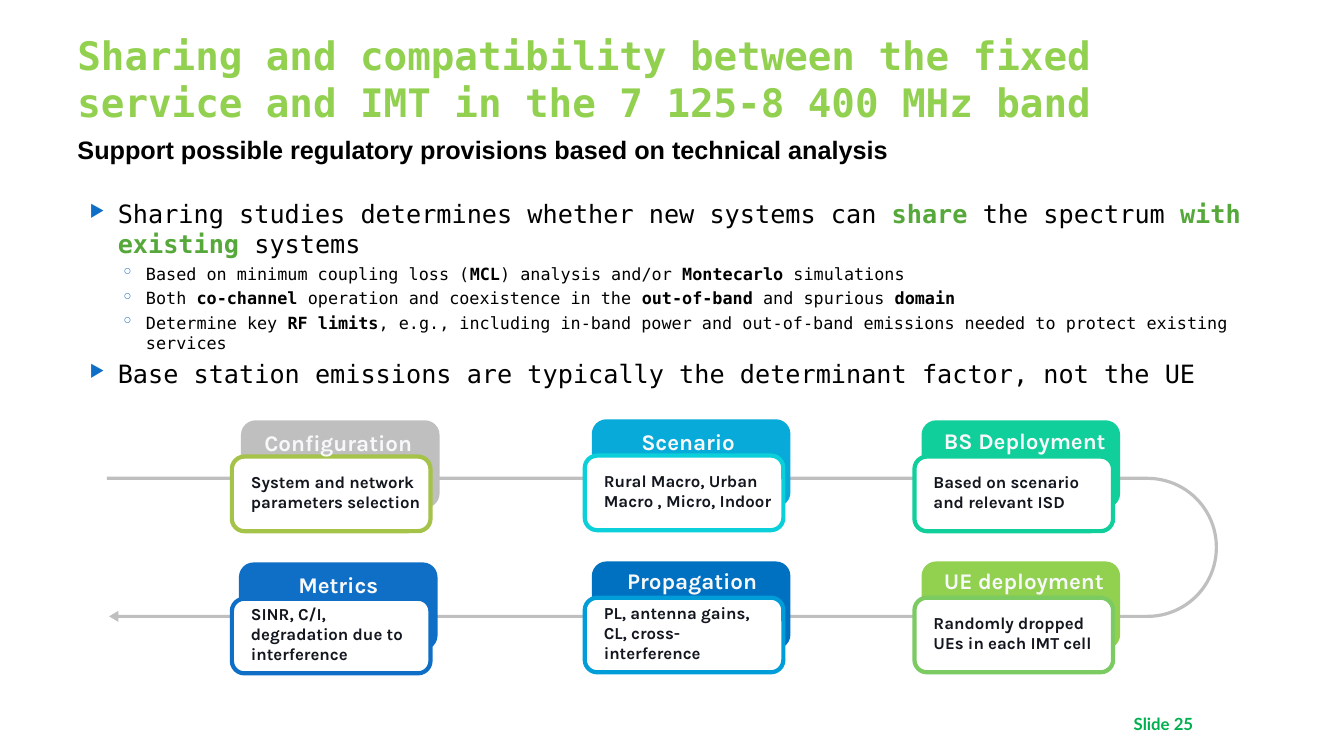
from lxml.etree import SubElement
from pptx import Presentation
from pptx.dml.color import RGBColor
from pptx.enum.shapes import MSO_SHAPE as Shape
from pptx.enum.text import MSO_ANCHOR as Anchor, PP_ALIGN as Align
from pptx.oxml.ns import qn
from pptx.util import Emu, Pt

PX = 9144
MONO, SANS, KARLA, LATO = "DejaVu Sans Mono", "Arial", "Karla", "Lato"
BLACK = RGBColor(0x00, 0x00, 0x00)
WHITE = RGBColor(0xFF, 0xFF, 0xFF)
PALE = RGBColor(0xF7, 0xF8, 0xFA)
INK = RGBColor(0x13, 0x16, 0x1E)
GRAY = RGBColor(0xBF, 0xBF, 0xBF)
LIME = RGBColor(0x92, 0xD0, 0x50)
GREEN = RGBColor(0x55, 0xA8, 0x39)
LEAF = RGBColor(0x00, 0xB0, 0x50)
BLUE = RGBColor(0x0F, 0x6F, 0xC6)
NAVY = RGBColor(0x00, 0x70, 0xC0)
SKY = RGBColor(0x07, 0xAA, 0xD8)
AZURE = RGBColor(0x00, 0x9D, 0xD9)
CYAN = RGBColor(0x0B, 0xD0, 0xD9)
OLIVE = RGBColor(0xA5, 0xC2, 0x49)
MINT = RGBColor(0x10, 0xCF, 0x9B)
GRASS = RGBColor(0x7C, 0xCA, 0x62)

POINTS = [
    (0, "Sharing studies determines whether new systems can *share* the spectrum *with existing* systems"),
    (1, "Based on minimum coupling loss (*MCL*) analysis and/or *Montecarlo* simulations"),
    (1, "Both *co-channel* operation and coexistence in the *out-of-band* and spurious *domain*"),
    (1, "Determine key *RF limits*, e.g., including in-band power and out-of-band emissions "
        "needed to protect existing services"),
    (0, "Base station emissions are typically the determinant factor, not the UE"),
]
LEVELS = [
    dict(left=40, hang=28, gap=4, size=18, mark="▶", pct=68, accent=GREEN),
    dict(left=68, hang=25, gap=3.2, size=12, mark="◦", pct=100, accent=BLACK),
]
CARDS = [
    (230, 453, 9, (7, -32), GRAY, OLIVE, "Configuration", "System and network parameters selection"),
    (580, 452, 7, (4, -32), SKY, CYAN, "Scenario", "Rural Macro, Urban Macro , Micro, Indoor"),
    (907, 453, 7, (11, -34), MINT, MINT, "BS Deployment", "Based on scenario and relevant ISD"),
    (907, 593, 7, (10, -35), LIME, GRASS, "UE deployment", "Randomly dropped UEs in each IMT cell"),
    (580, 593, 7, (8, -35), NAVY, AZURE, "Propagation", "PL, antenna gains, CL, cross-interference"),
    (230, 594, 7, (7, -32), BLUE, BLUE, "Metrics", "SINR, C/I, degradation due to interference"),
]


def scale(*box):
    """Turn px lengths into EMU."""
    return [Emu(n * PX) for n in box]


def style(para, face, size, color, bold=False):
    """Set the font of a paragraph."""
    font = para.font
    font.name, font.size, font.bold = face, Pt(size), bold
    font.color.rgb = color


def label(slide, box, text, face, size, color, align=Align.LEFT, anchor=Anchor.TOP):
    """Place one bold paragraph in a text box."""
    frame = slide.shapes.add_textbox(*scale(*box)).text_frame
    frame.word_wrap = True
    frame.vertical_anchor = anchor
    para = frame.paragraphs[0]
    para.text, para.alignment = text, align
    style(para, face, size, color, True)


def solid(slide, kind, box, fill, line=None):
    """Place a filled shape, outlined if a line colour is given."""
    shape = slide.shapes.add_shape(kind, *scale(*box))
    shape.shadow.inherit = False
    shape.fill.solid()
    shape.fill.fore_color.rgb = fill
    if line is None:
        shape.line.fill.background()
    else:
        shape.line.color.rgb = line
        shape.line.width = Pt(3)
    return shape


def bullet(para, left, hang, mark, pct):
    """Give a paragraph its indent and blue bullet."""
    props = para._p.get_or_add_pPr()
    props.set("marL", str(left * PX))
    props.set("indent", str(-hang * PX))
    tint = SubElement(props, qn("a:buClr"))
    SubElement(tint, qn("a:srgbClr")).set("val", str(BLUE))
    SubElement(props, qn("a:buSzPct")).set("val", str(pct * 1000))
    SubElement(props, qn("a:buChar")).set("char", mark)


def outline(slide, box):
    """Write the bulleted points, with starred words in bold."""
    frame = slide.shapes.add_textbox(*scale(*box)).text_frame
    frame.word_wrap = True
    for i, (level, text) in enumerate(POINTS):
        look = LEVELS[level]
        para = frame.add_paragraph() if i else frame.paragraphs[0]
        para.level = level
        bullet(para, look["left"], look["hang"], look["mark"], look["pct"])
        para.space_before = Pt(look["gap"] if i else 0)
        style(para, MONO, look["size"], BLACK)
        for j, part in enumerate(text.split("*")):
            if part:
                run = para.add_run()
                run.text = part
                if j % 2:
                    run.font.bold = True
                    run.font.color.rgb = look["accent"]


def card(slide, x, y, shift, head, back, edge, name, note):
    """Draw a step: back plate, front plate, heading and note."""
    solid(slide, Shape.ROUNDED_RECTANGLE, (x + shift, y - 36, 197, 87), back)
    solid(slide, Shape.ROUNDED_RECTANGLE, (x, y, 197, 74), WHITE, edge)
    dx, dy = head
    label(slide, (x + dx, y + dy, 197, 37), name, KARLA, 16, PALE, Align.CENTER)
    label(slide, (x + 9, y + 10, 188, 50), note, KARLA, 12, INK, anchor=Anchor.MIDDLE)


def flow(slide, box):
    """Draw the U-turn arrow lying in the box, with the steps on it."""
    x, y, w, h = box
    turn = solid(slide, Shape.U_TURN_ARROW, (x + (w - h) // 2, y + (h - w) // 2, h, w), GRAY)
    turn.rotation = 90
    for i, value in enumerate((0.022, 0.038, 0.064, 0.485, 0.998)):
        turn.adjustments[i] = value
    for step in CARDS:
        card(slide, *step)


def main():
    """Build and save the slide."""
    deck = Presentation()
    deck.slide_width, deck.slide_height = scale(1333, 750)
    slide = deck.slides.add_slide(deck.slide_layouts[6])
    label(slide, (67, 30, 1200, 95),
          "Sharing and compatibility between the fixed service and IMT in the 7 125-8 400 MHz band",
          MONO, 28, LIME, anchor=Anchor.MIDDLE)
    label(slide, (67, 128, 1151, 40),
          "Support possible regulatory provisions based on technical analysis", SANS, 18, BLACK)
    outline(slide, (67, 192, 1200, 192))
    flow(slide, (106, 473, 1102, 144))
    label(slide, (1044, 693, 220, 40), "Slide 25", LATO, 12, LEAF, Align.CENTER, Anchor.BOTTOM)
    deck.save("out.pptx")


if __name__ == "__main__":
    main()
